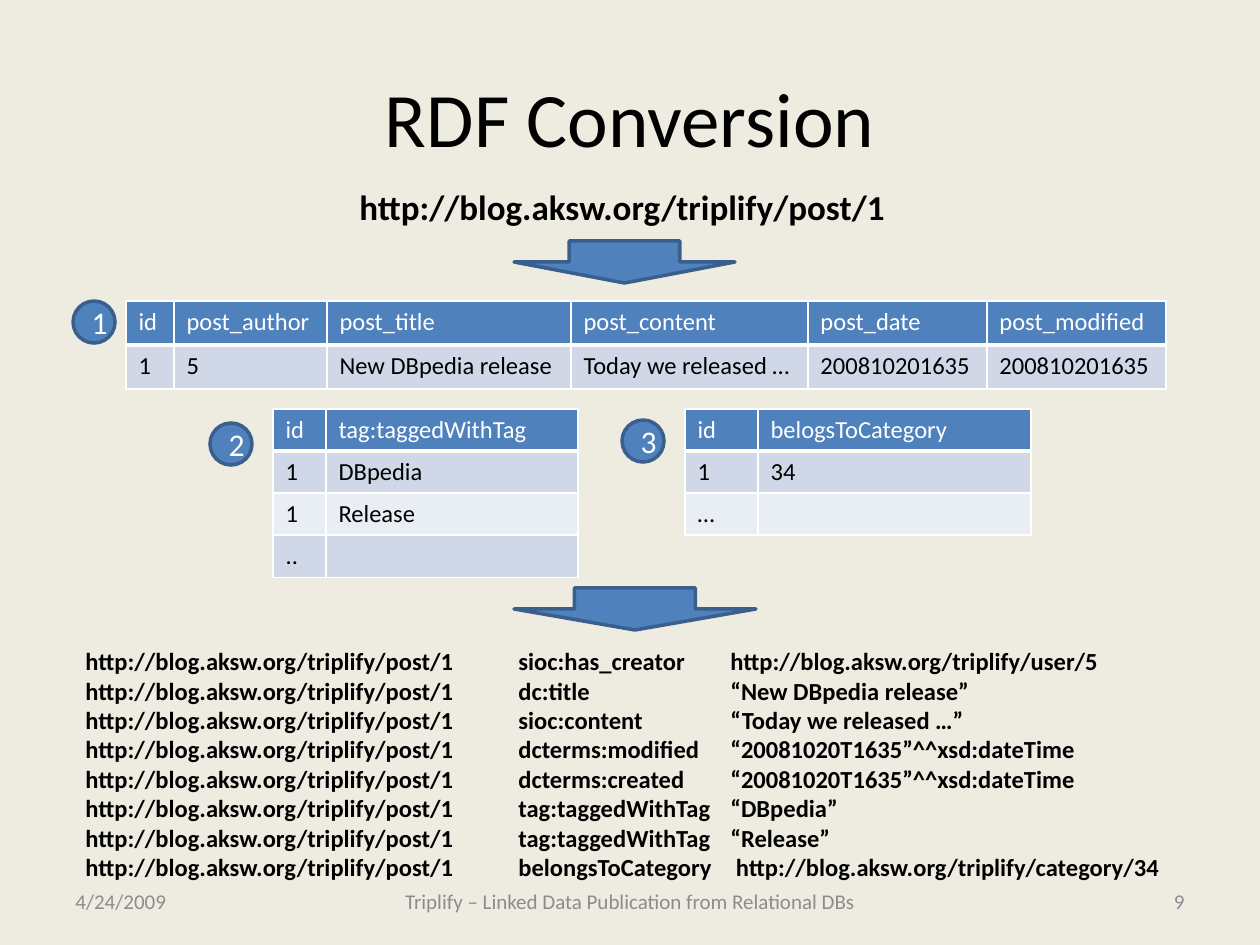
from lxml.etree import SubElement
from pptx import Presentation
from pptx.dml.color import RGBColor
from pptx.enum.shapes import MSO_SHAPE as Shape
from pptx.enum.text import MSO_ANCHOR as Anchor, MSO_AUTO_SIZE as AutoSize, PP_ALIGN as Align
from pptx.oxml.ns import qn
from pptx.util import Emu, Pt

PIXELS_PER_INCH = 126
COLORS = {
    "background": "EEECE1",
    "blue": "4F81BD",
    "outline": "3A5F8C",
    "odd_row": "D0D8E8",
    "even_row": "E9EDF4",
    "white": "FFFFFF",
    "black": "000000",
    "gray": "8C8C8C",
}
POST_URL = "http://blog.aksw.org/triplify/post/1"
STATEMENTS = [
    ("sioc:has_creator", "http://blog.aksw.org/triplify/user/5"),
    ("dc:title", "“New DBpedia release”"),
    ("sioc:content", "“Today we released …”"),
    ("dcterms:modified", "“20081020T1635”^^xsd:dateTime"),
    ("dcterms:created", "“20081020T1635”^^xsd:dateTime"),
    ("tag:taggedWithTag", "“DBpedia”"),
    ("tag:taggedWithTag", "“Release”"),
    ("belongsToCategory", " http://blog.aksw.org/triplify/category/34"),
]
TABLES = [
    ((126, 301), 44, (48, 153, 244, 237, 179, 179), [
        ("id", "post_author", "post_title", "post_content", "post_date", "post_modified"),
        ("1", "5", "New DBpedia release", "Today we released …", "200810201635", "200810201635"),
    ]),
    ((273, 409), 42, (53, 252), [
        ("id", "tag:taggedWithTag"),
        ("1", "DBpedia"),
        ("1", "Release"),
        ("..", ""),
    ]),
    ((685, 409), 42, (73, 273), [
        ("id", "belogsToCategory"),
        ("1", "34"),
        ("…", ""),
    ]),
]


def px(length):
    return Emu(round(length * 914400 / PIXELS_PER_INCH))


def color(name):
    return RGBColor.from_string(COLORS[name])


def paint(fill, name):
    fill.solid()
    fill.fore_color.rgb = color(name)


def write(frame, text, size=14, ink="black", bold=False, align=Align.LEFT, anchor=None, tabs=()):
    """Fill a text frame, one paragraph for each line of text."""
    if anchor is not None:
        frame.vertical_anchor = anchor
    for index, line in enumerate(text.split("\n")):
        paragraph = frame.add_paragraph() if index else frame.paragraphs[0]
        paragraph.alignment = align
        if tabs:
            tab_list = SubElement(paragraph._p.get_or_add_pPr(), qn("a:tabLst"))
            for position in tabs:
                SubElement(tab_list, qn("a:tab"), pos=str(px(position)), algn="l")
        if not line:
            # Keeps an empty table cell from growing to the default text size.
            SubElement(paragraph._p, qn("a:endParaRPr"), sz=str(size * 100))
            continue
        run = paragraph.add_run()
        run.text = line
        run.font.name = "Calibri"
        run.font.size = Pt(size)
        run.font.bold = bold
        run.font.color.rgb = color(ink)


def add_text(slide, box, text, wrap=True, grow=False, **text_format):
    frame = slide.shapes.add_textbox(*map(px, box)).text_frame
    frame.word_wrap = wrap
    if grow:
        frame.auto_size = AutoSize.SHAPE_TO_FIT_TEXT
    write(frame, text, **text_format)


def add_blue_shape(slide, kind, box):
    shape = slide.shapes.add_shape(kind, *map(px, box))
    shape.shadow.inherit = False
    paint(shape.fill, "blue")
    shape.line.color.rgb = color("outline")
    shape.line.width = Pt(2)
    return shape


def add_badge(slide, left, top, number):
    badge = add_blue_shape(slide, Shape.OVAL, (left, top, 42, 42))
    write(badge.text_frame, number, size=18, ink="white", align=Align.CENTER, anchor=Anchor.MIDDLE)


def add_borders(cell, bottom_width):
    properties = cell._tc.get_or_add_tcPr()
    for side, width in (("L", 1), ("R", 1), ("T", 1), ("B", bottom_width)):
        line = SubElement(properties, qn(f"a:ln{side}"), w=str(Pt(width)))
        fill = SubElement(line, qn("a:solidFill"))
        SubElement(fill, qn("a:srgbClr"), val=COLORS["white"])


def add_data_table(slide, position, row_height, widths, rows):
    box = (*position, sum(widths), row_height * len(rows))
    table = slide.shapes.add_table(len(rows), len(widths), *map(px, box)).table
    for column, width in zip(table.columns, widths):
        column.width = px(width)
    for row_index, values in enumerate(rows):
        is_header = row_index == 0
        band = "blue" if is_header else ("even_row", "odd_row")[row_index % 2]
        table.rows[row_index].height = px(row_height)
        for column_index, value in enumerate(values):
            cell = table.cell(row_index, column_index)
            add_borders(cell, 3 if is_header else 1)
            paint(cell.fill, band)
            write(cell.text_frame, value, ink="white" if is_header else "black")


def add_title(slide, text):
    title = slide.shapes.title
    title.left, title.top, title.width, title.height = map(px, (63, 38, 1134, 157))
    write(title.text_frame, text, size=44, align=Align.CENTER, anchor=Anchor.MIDDLE)


def add_footer(slide):
    for left, width, text, align in (
        (63, 294, "4/24/2009", Align.LEFT),
        (357, 546, "Triplify – Linked Data Publication from Relational DBs", Align.CENTER),
        (903, 294, "9", Align.RIGHT),
    ):
        add_text(slide, (left, 876, width, 50), text, size=12, ink="gray",
                 align=align, anchor=Anchor.MIDDLE)


def main():
    presentation = Presentation()
    presentation.slide_width, presentation.slide_height = px(1260), px(945)
    slide = presentation.slides.add_slide(presentation.slide_layouts[5])
    paint(slide.background.fill, "background")

    add_title(slide, "RDF Conversion")
    add_text(slide, (347, 179, 556, 55), POST_URL, wrap=False, grow=True, size=20, bold=True)
    for table in TABLES:
        add_data_table(slide, *table)
    for number, (left, top) in enumerate([(73, 301), (210, 423), (622, 420)], start=1):
        add_badge(slide, left, top, str(number))
    for top, width in ((241, 221), (588, 242)):
        add_blue_shape(slide, Shape.DOWN_ARROW, (514, top, width, 42))
    triples = "\n".join("\t".join((POST_URL, *statement)) for statement in STATEMENTS)
    add_text(slide, (73, 640, 1124, 251), triples, grow=True, bold=True, tabs=(433, 645))
    add_footer(slide)

    presentation.save("out.pptx")


if __name__ == "__main__":
    main()
